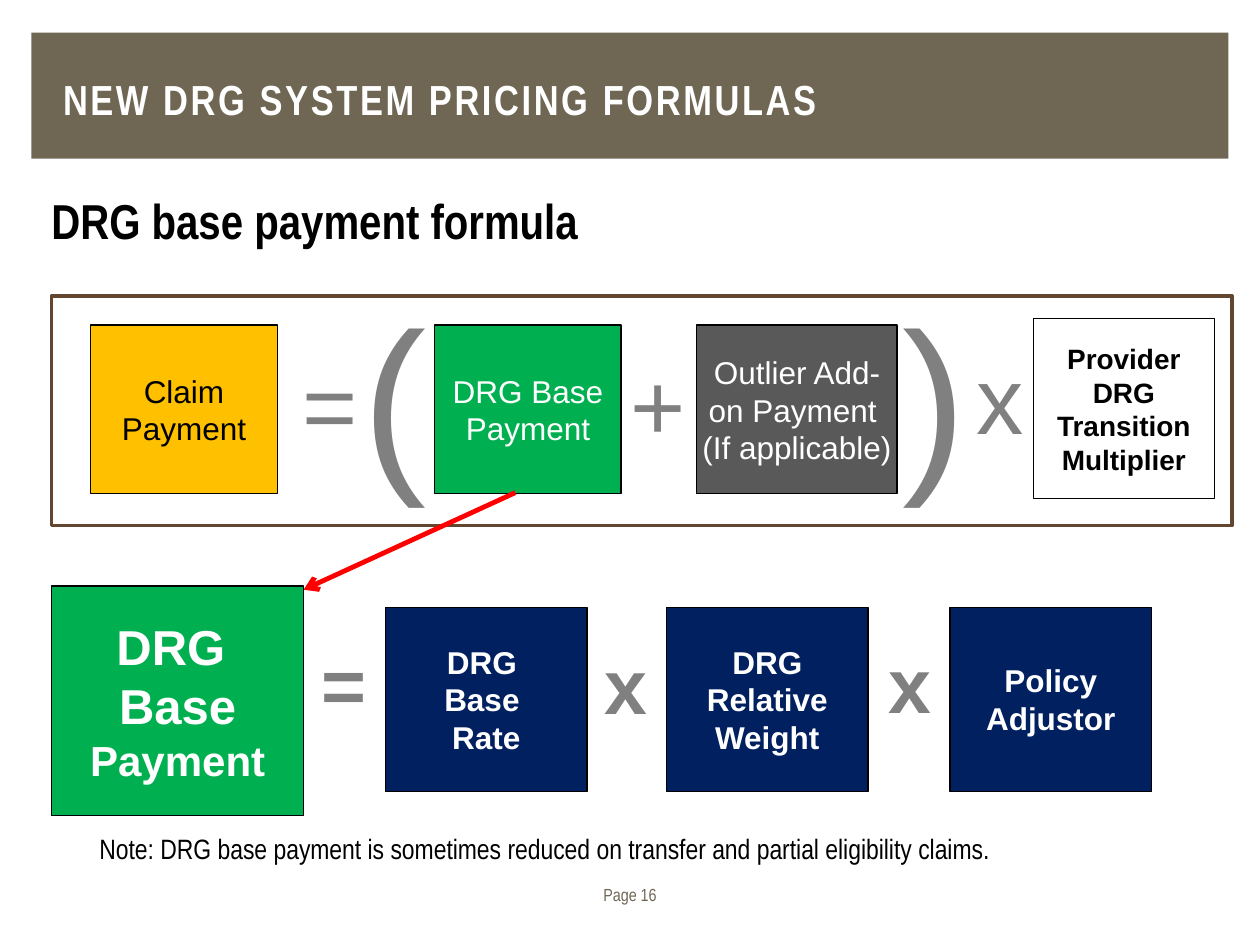
from pptx import Presentation
from pptx.dml.color import RGBColor
from pptx.enum.shapes import MSO_CONNECTOR, MSO_SHAPE
from pptx.enum.text import MSO_ANCHOR, PP_ALIGN
from pptx.oxml.ns import qn
from pptx.util import Inches, Pt
from lxml.etree import SubElement

WHITE = RGBColor(0xFF, 0xFF, 0xFF)
BLACK = RGBColor(0, 0, 0)
TAUPE = RGBColor(0x6F, 0x67, 0x54)
BROWN = RGBColor(0x62, 0x46, 0x2F)
GREEN = RGBColor(0x00, 0xB0, 0x50)
GOLD = RGBColor(0xFF, 0xC0, 0x00)
CHARCOAL = RGBColor(0x59, 0x59, 0x59)
NAVY = RGBColor(0x00, 0x20, 0x60)
GRAY = RGBColor(0x80, 0x80, 0x80)
RED = RGBColor(0xFF, 0, 0)

TITLE = "NEW DRG SYSTEM PRICING FORMULAS"
HEADING = "DRG base payment formula"
NOTE = "Note: DRG base payment is sometimes reduced on transfer and partial eligibility claims."
PAGE_LABEL = "Page 16"

# paragraphs, (left, top, width, height), fill, text colour, size, bold
CLAIM_TERMS = [
    (["Claim Payment"], (0.72, 2.58, 1.48, 1.34), GOLD, BLACK, 18, False),
    (["DRG Base Payment"], (3.45, 2.58, 1.48, 1.34), GREEN, WHITE, 18, False),
    (["Outlier Add-on Payment ", "(If applicable)"],
     (5.53, 2.58, 1.59, 1.34), CHARCOAL, WHITE, 18, False),
    (["Provider DRG Transition Multiplier"],
     (8.2, 2.53, 1.44, 1.43), WHITE, BLACK, 16, True),
]
# paragraphs, left
BASE_FACTORS = [
    (["DRG ", "Base ", "Rate"], 3.06),
    (["DRG Relative Weight"], 5.29),
    (["Policy Adjustor"], 7.54),
]
# symbol, (left, top, width, height), size, bold
OPERATORS = [
    ("=", (2.3, 2.7, 0.64, 1.01), 54, False),
    ("(", (2.77, 2.14, 0.72, 1.95), 110, False),
    ("+", (4.9, 2.7, 0.64, 1.01), 54, False),
    (")", (7.06, 2.14, 0.72, 1.95), 110, False),
    ("x", (7.65, 2.65, 0.58, 1.01), 54, False),
    ("=", (2.45, 5, 0.56, 0.84), 44, True),
    ("x", (4.69, 5.01, 0.55, 0.84), 44, True),
    ("x", (6.95, 5, 0.55, 0.84), 44, True),
]

deck = Presentation()
deck.slide_width, deck.slide_height = Inches(10), Inches(7.5)
page = deck.slides.add_slide(deck.slide_layouts[5])


def inches(place):
    return [Inches(value) for value in place]


def write(box, paragraphs, size, color, bold=False, font="Arial", align=PP_ALIGN.CENTER):
    frame = box.text_frame
    frame.text = "\n".join(paragraphs)
    for para in frame.paragraphs:
        para.alignment = align
        para.font.name = font
        para.font.size = Pt(size)
        para.font.bold = bold
        para.font.color.rgb = color
    return frame


def add_box(place, fill=None, line=None, width=0.75):
    box = page.shapes.add_shape(MSO_SHAPE.RECTANGLE, *inches(place))
    box.shadow.inherit = False
    if fill is None:
        box.fill.background()
    else:
        box.fill.solid()
        box.fill.fore_color.rgb = fill
    if line is None:
        box.line.fill.background()
    else:
        box.line.color.rgb = line
        box.line.width = Pt(width)
    return box


def add_term(paragraphs, place, fill, color, size, bold, side_inset=0.0):
    box = add_box(place, fill, BLACK)
    frame = write(box, paragraphs, size, color, bold)
    frame.word_wrap = True
    frame.vertical_anchor = MSO_ANCHOR.MIDDLE
    frame.margin_left = frame.margin_right = Inches(side_inset)
    return box


def add_text(text, place, size, color, wrap=True, **style):
    box = page.shapes.add_textbox(*inches(place))
    frame = write(box, [text], size, color, **style)
    frame.word_wrap = wrap
    return frame


def add_arrow(start, end):
    arrow = page.shapes.add_connector(MSO_CONNECTOR.STRAIGHT, *inches(start + end))
    arrow.line.color.rgb = RED
    arrow.line.width = Pt(2.75)
    SubElement(arrow.line._get_or_add_ln(), qn("a:tailEnd"), type="arrow")
    SubElement(arrow._element.spPr, qn("a:effectLst"))


# Title band, placed behind the title
band = add_box((0.25, 0.26, 9.5, 1), TAUPE)
title = page.shapes.title
title._element.addprevious(band._element)
title.left, title.top, title.width, title.height = inches((0.5, 0.31, 9.5, 0.95))
title_frame = write(title, [TITLE], 24, WHITE, True, "Arial Narrow", PP_ALIGN.LEFT)
title_frame.vertical_anchor = MSO_ANCHOR.MIDDLE
title_frame.margin_left = title_frame.margin_right = 0
title_frame.margin_top = title_frame.margin_bottom = 0
title_frame.paragraphs[0].runs[0].font._element.set("spc", "150")

add_text(HEADING, (0.31, 1.46, 9.4, 0.57), 28, BLACK,
         bold=True, font="Arial Narrow", align=PP_ALIGN.LEFT)

# Claim payment formula
add_box((0.41, 2.35, 9.37, 1.82), line=BROWN, width=2)
for term in CLAIM_TERMS:
    add_term(*term)

# Base payment formula
result = add_term(["DRG ", "Base "], (0.41, 4.65, 2, 1.82), GREEN, WHITE, 28, True, 0.1)
payment = result.text_frame.paragraphs[1].add_run()
payment.text = "Payment"
payment.font.size = Pt(24)
for paragraphs, left in BASE_FACTORS:
    add_term(paragraphs, (left, 4.82, 1.6, 1.46), NAVY, WHITE, 18, True, 0.1)

for symbol, place, size, bold in OPERATORS:
    add_text(symbol, place, size, GRAY, wrap=False, bold=bold)
add_arrow((4.09, 3.91), (2.41, 4.68))

add_text(NOTE, (0.69, 6.55, 9.09, 0.37), 16, BLACK,
         font="Arial Narrow", align=PP_ALIGN.LEFT)
footer = add_text(PAGE_LABEL, (0, 6.96, 10, 0.27), 10, TAUPE, font="Arial Narrow")
footer.vertical_anchor = MSO_ANCHOR.BOTTOM

deck.save("out.pptx")
